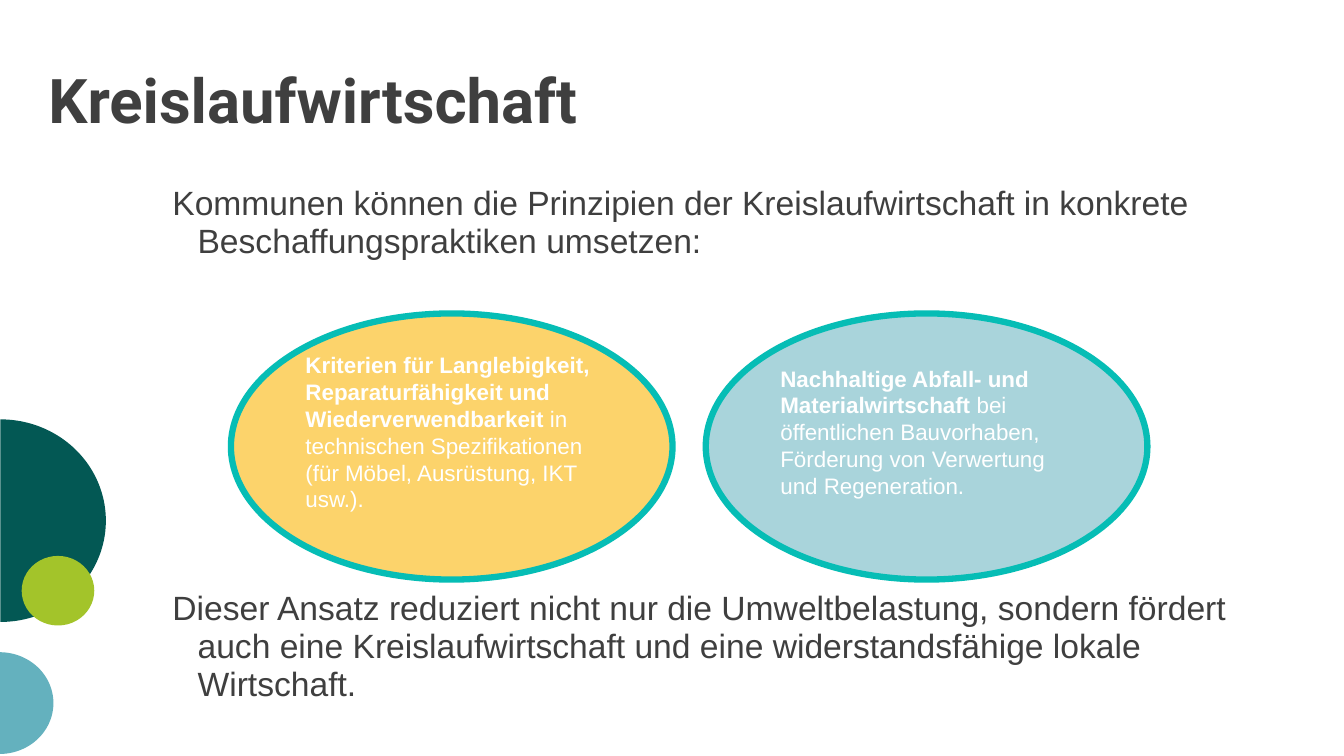
import pptx
import pptx.util
import pptx.dml.color
import pptx.enum.shapes
import pptx.enum.text

Inches = pptx.util.Inches
Pt = pptx.util.Pt
SHAPE = pptx.enum.shapes.MSO_SHAPE
ANCHOR = pptx.enum.text.MSO_ANCHOR

COLORS = {
    "text": "3F3F3F", "white": "FFFFFF", "outline": "06BDB5",
    "yellow": "FCD36B", "pale blue": "A9D4DB",
    "dark green": "035854", "blue": "64B1BE", "lime": "A3C42A",
}

TITLE = "Kreislaufwirtschaft"
BODY = [  # top, height, text
    (1.83, 1.0, "Kommunen können die Prinzipien der Kreislaufwirtschaft in konkrete "
                "Beschaffungspraktiken umsetzen:"),
    (5.85, 1.3, "Dieser Ansatz reduziert nicht nur die Umweltbelastung, sondern fördert "
                "auch eine Kreislaufwirtschaft und eine widerstandsfähige lokale Wirtschaft."),
]
MEASURES = [  # fill, bold text, regular text
    ("yellow", "Kriterien für Langlebigkeit, Reparaturfähigkeit und Wiederverwendbarkeit ",
     "in technischen Spezifikationen (für Möbel, Ausrüstung, IKT usw.)."),
    ("pale blue", "Nachhaltige Abfall- und Materialwirtschaft ",
     "bei öffentlichen Bauvorhaben, Förderung von Verwertung und Regeneration."),
]
DECORATION = [  # preset, box, fill
    (SHAPE.PIE, (-1, 4.12, 2.01, 2.09), "dark green"),
    (SHAPE.PIE, (-0.51, 6.44, 1.01, 1.07), "blue"),
    (SHAPE.OVAL, (0.23, 5.5, 0.69, 0.72), "lime"),
]
HALF_TURN = 108  # pie end angle of 180 degrees, in adjustment units
MEASURE_LEFT, MEASURE_TOP, MEASURE_STEP = 2.29, 3.11, 4.71
MEASURE_SIZE = (4.38, 2.64)


def color(name):
    return pptx.dml.color.RGBColor.from_string(COLORS[name])


def add_filled_shape(slide, preset, box, fill):
    shape = slide.shapes.add_shape(preset, *map(Inches, box))
    shape.shadow.inherit = False
    shape.fill.solid()
    shape.fill.fore_color.rgb = color(fill)
    shape.line.fill.background()
    return shape


def write(shape, *runs, size, ink="text", font="Arial", anchor=ANCHOR.TOP,
          insets=(0, 0, 0, 0), spacing=1.0, margin=0, indent=0):
    """Fill a shape with one paragraph made of (text, bold) runs."""
    frame = shape.text_frame
    frame.word_wrap = True
    frame.vertical_anchor = anchor
    (frame.margin_left, frame.margin_top,
     frame.margin_right, frame.margin_bottom) = map(Inches, insets)
    paragraph = frame.paragraphs[0]
    paragraph.alignment = pptx.enum.text.PP_ALIGN.LEFT
    paragraph.line_spacing = spacing
    if margin:
        properties = paragraph._p.get_or_add_pPr()
        properties.set("marL", str(Inches(margin)))
        properties.set("indent", str(Inches(indent)))
    for text, bold in runs:
        run = paragraph.add_run()
        run.text = text
        run.font.name = font
        run.font.size = Pt(size)
        run.font.bold = bold
        run.font.color.rgb = color(ink)


def main():
    presentation = pptx.Presentation()
    presentation.slide_width = Inches(13.33)
    presentation.slide_height = Inches(7.5)
    slide = presentation.slides.add_slide(presentation.slide_layouts[6])

    for preset, box, fill in DECORATION:
        shape = add_filled_shape(slide, preset, box, fill)
        shape.rotation = 270
        if preset == SHAPE.PIE:
            shape.adjustments[0] = 0
            shape.adjustments[1] = HALF_TURN

    title = slide.shapes.add_textbox(*map(Inches, (0.48, 0, 12.38, 1.34)))
    write(title, (TITLE, True), size=44, font="Roboto", anchor=ANCHOR.BOTTOM, spacing=0.8)

    for top, height, text in BODY:
        body = slide.shapes.add_textbox(*map(Inches, (1.46, top, 11.09, height)))
        write(body, (text, False), size=24, spacing=0.95, margin=0.5, indent=-0.25)

    for index, (fill, lead, detail) in enumerate(MEASURES):
        left = MEASURE_LEFT + index * MEASURE_STEP
        ellipse = add_filled_shape(slide, SHAPE.OVAL, (left, MEASURE_TOP, *MEASURE_SIZE), fill)
        ellipse.line.color.rgb = color("outline")
        ellipse.line.width = Pt(4.5)
        write(ellipse, (lead, True), (detail, False), size=16, ink="white",
              anchor=ANCHOR.MIDDLE, insets=(0.1, 0.05, 0.1, 0.34))

    presentation.save("out.pptx")


if __name__ == "__main__":
    main()
